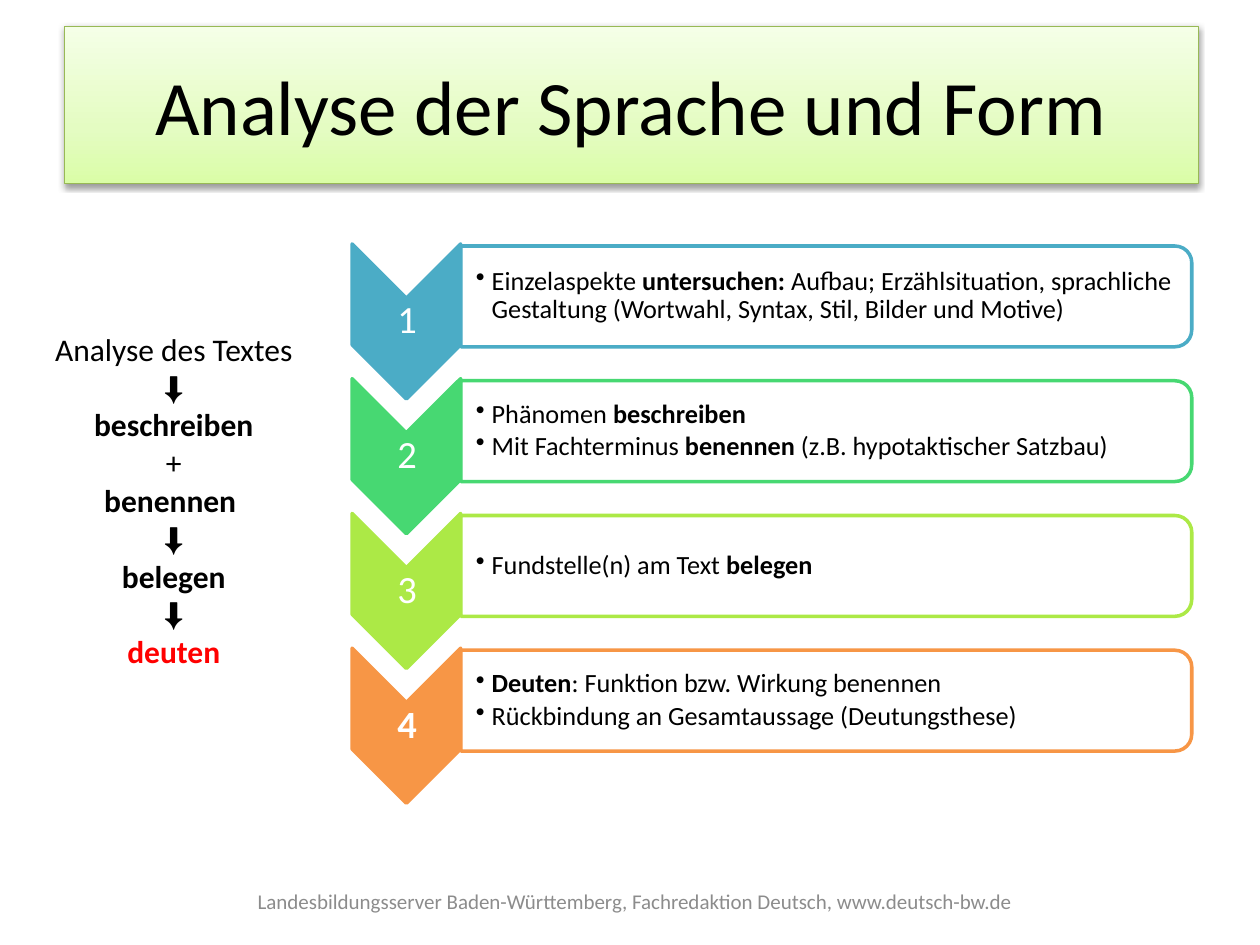
"""Build the slide on analysing language and form in four steps."""
from copy import deepcopy
from dataclasses import dataclass

from lxml.etree import SubElement
from pptx import Presentation
from pptx.dml.color import RGBColor
from pptx.enum.shapes import MSO_SHAPE
from pptx.enum.text import MSO_ANCHOR, PP_ALIGN
from pptx.oxml.ns import qn
from pptx.slide import Slide
from pptx.util import Pt

COLORS = {
    "text": "000000", "footer": "8C8C8C", "goal": "FF0000", "white": "FFFFFF",
    "title_line": "98B955", "title_bottom": "DAFDA7",
    "title_middle": "E4FCC2", "title_top": "F5FFE7",
    "blue": "4BACC6", "green": "47D872", "lime": "ACE946", "orange": "F79646",
}
STEPS = [
    ("blue", "1", ["Einzelaspekte **untersuchen: **Aufbau; Erzählsituation, sprachliche "
                   "Gestaltung (Wortwahl, Syntax, Stil, Bilder und Motive)"]),
    ("green", "2", ["Phänomen **beschreiben**",
                    "Mit Fachterminus **benennen **(z.B. hypotaktischer Satzbau)"]),
    ("lime", "3", ["Fundstelle(n) am Text **belegen**"]),
    ("orange", "**4**", ["**Deuten**: Funktion bzw. Wirkung benennen",
                         "Rückbindung an Gesamtaussage (Deutungsthese)"]),
]
SEQUENCE = ["Analyse des Textes", "⬇", "**beschreiben**", "+", "**benennen **",
            "⬇", "**belegen**", "⬇", "**deuten**"]
STEP_PITCH = 77


def color(name):
    return RGBColor.from_string(COLORS[name])


@dataclass
class SlideBuilder:
    slide: Slide
    font: str = "Calibri"

    def fill_frame(self, frame, lines, size, ink="text", align=PP_ALIGN.CENTER, **spacing):
        """Fill a frame; parts between double asterisks are bold."""
        for index, line in enumerate(lines):
            paragraph = frame.add_paragraph() if index else frame.paragraphs[0]
            for key, value in {"alignment": align, **spacing}.items():
                setattr(paragraph, key, value)
            for part, wording in enumerate(line.split("**")):
                if wording:
                    run = paragraph.add_run()
                    run.text = wording
                    look = {"name": self.font, "size": Pt(size), "bold": part % 2 == 1}
                    for key, value in look.items():
                        setattr(run.font, key, value)
                    run.font.color.rgb = color(ink)
        return frame

    def title(self, wording, left, top, width, height):
        banner = self.slide.shapes.title
        place = {"left": left, "top": top, "width": width, "height": height}
        for key, value in place.items():
            setattr(banner, key, Pt(value))
        banner.fill.gradient()
        banner.fill.gradient_angle = 90
        first = banner._element.spPr.find(".//" + qn("a:gs"))
        first.addnext(deepcopy(first))
        shades = [(0, "title_bottom"), (0.35, "title_middle"), (1, "title_top")]
        for stop, (position, shade) in zip(banner.fill.gradient_stops, shades):
            stop.position = position
            stop.color.rgb = color(shade)
        banner.line.color.rgb = color("title_line")
        banner.line.width = Pt(0.75)
        banner.shadow.inherit = False
        effects = banner._element.spPr.find(qn("a:effectLst"))
        shadow = SubElement(effects, qn("a:outerShdw"), blurRad=str(Pt(3.1)),
                            dist=str(Pt(1.6)), dir="5400000", rotWithShape="0")
        black = SubElement(shadow, qn("a:srgbClr"), val=COLORS["text"])
        SubElement(black, qn("a:alpha"), val="38000")
        banner.text_frame.vertical_anchor = MSO_ANCHOR.MIDDLE
        self.fill_frame(banner.text_frame, [wording], 44)

    def text(self, lines, place, size, margins=(7.2, 3.6, 7.2, 3.6),
             anchor=MSO_ANCHOR.MIDDLE, **style):
        frame = self.slide.shapes.add_textbox(*map(Pt, place)).text_frame
        sides = ("margin_left", "margin_top", "margin_right", "margin_bottom")
        for side, margin in zip(sides, margins):
            setattr(frame, side, Pt(margin))
        frame.word_wrap = True
        frame.vertical_anchor = anchor
        return self.fill_frame(frame, lines, size, **style)

    def turned(self, preset, center_x, center_y, length, breadth, fill, line):
        """Add a preset turned a quarter clockwise around its centre."""
        place = (center_x - length / 2, center_y - breadth / 2, length, breadth)
        shape = self.slide.shapes.add_shape(preset, *map(Pt, place))
        shape.rotation = 90
        shape.shadow.inherit = False
        shape.fill.solid()
        shape.fill.fore_color.rgb = color(fill)
        shape.line.color.rgb = color(line)
        shape.line.width = Pt(2)
        return shape

    def bullets(self, lines, place):
        frame = self.text(lines, place, 15, (8.6, 0.7, 0.7, 0.7), align=PP_ALIGN.LEFT,
                          line_spacing=0.9, space_after=Pt(2.25), level=1)
        for paragraph in frame.paragraphs:
            properties = paragraph._p.get_or_add_pPr()
            properties.set("marL", str(Pt(9)))
            properties.set("indent", str(-Pt(9)))
            SubElement(properties, qn("a:buChar"), char="•")

    def step(self, top, tone, number, lines):
        self.turned(MSO_SHAPE.CHEVRON, 232.2, top + 44.3, 88.6, 62, tone, tone)
        self.text([number], (201.6, top + 31, 62, 26.6), 22, (1.4,) * 4,
                  ink="white", line_spacing=0.9, space_after=Pt(7.7))
        panel = self.turned(MSO_SHAPE.ROUND_2_SAME_RECTANGLE, 472.2, top + 30, 57.6, 417.6,
                            "white", tone)
        white = panel._element.spPr.find(qn("a:solidFill"))[0]
        SubElement(white, qn("a:alpha"), val="90000")
        self.bullets(lines, (263.4, top + 4, 414.7, 51.8))


def main():
    deck = Presentation()
    deck.slide_width, deck.slide_height = Pt(720), Pt(540)
    page = SlideBuilder(deck.slides.add_slide(deck.slide_layouts[5]))
    page.title("Analyse der Sprache und Form", 36.75, 15, 648, 90)
    page.text(["Landesbildungsserver Baden-Württemberg, Fachredaktion Deutsch, "
               "www.deutsch-bw.de"], (99.4, 500.4, 527, 28.8), 12, ink="footer")
    sequence = page.text(SEQUENCE, (0, 185, 198.7, 203.8), 18, anchor=MSO_ANCHOR.TOP)
    sequence.paragraphs[-1].runs[0].font.color.rgb = color("goal")
    for index, step in enumerate(STEPS):
        page.step(139.4 + index * STEP_PITCH, *step)
    deck.save("out.pptx")


if __name__ == "__main__":
    main()
